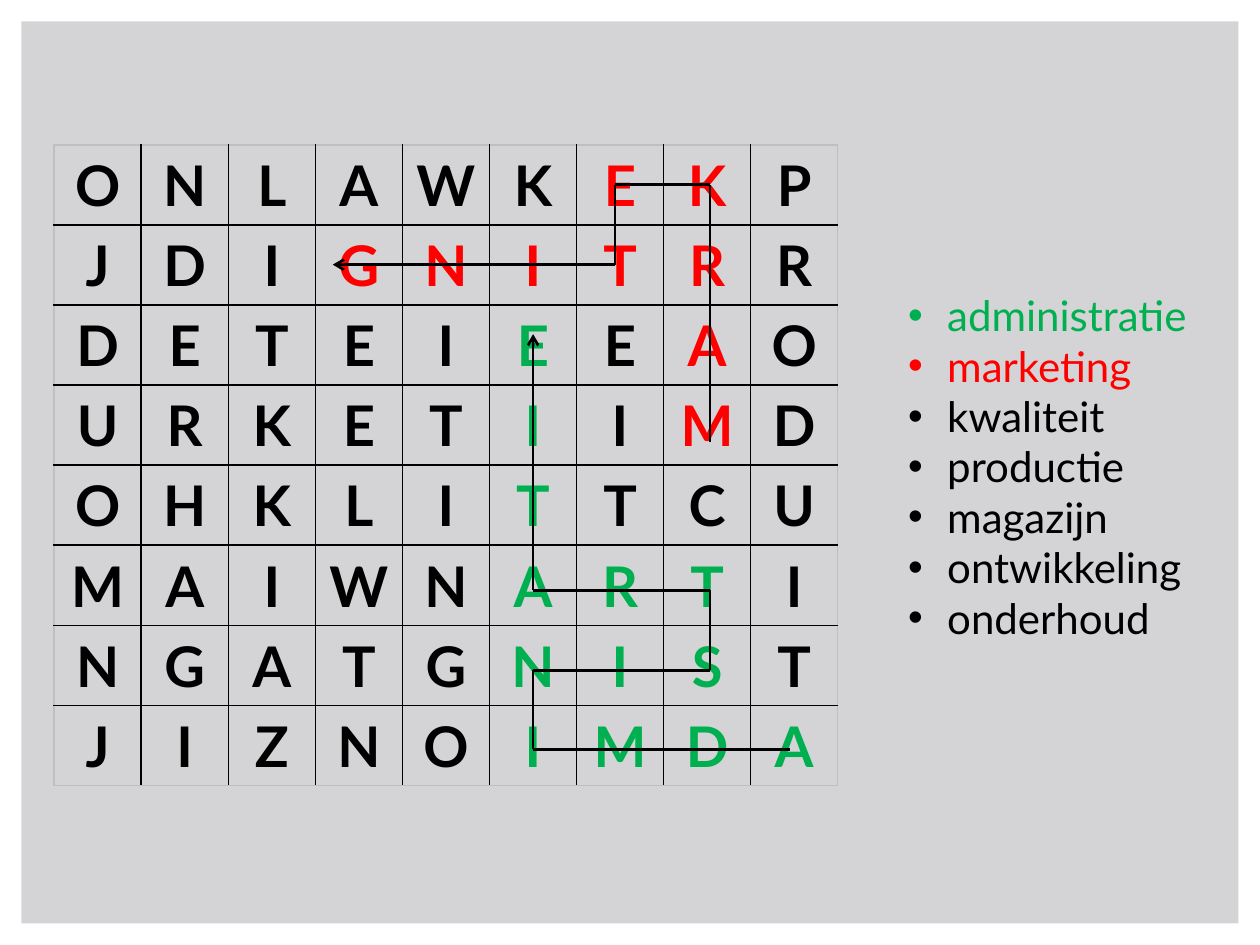
from dataclasses import dataclass

import pptx
import pptx.dml.color
import pptx.enum.shapes
import pptx.enum.text
import pptx.oxml.ns
import pptx.util
from lxml import etree

COLOURS = {"panel": "D4D4D6", "ink": "000000", "edge": "BFBFBF",
           "green": "00B050", "red": "FF0000"}
FONT = "Lato"
SLIDE_W, SLIDE_H = 10, 7.5
MARGIN = 0.17

LETTERS = ["ONLAWKEKP", "JDIGNITRR", "DETEIEEAO", "URKETIIMD",
           "OHKLITTCU", "MAIWNARTI", "NGATGNIST", "JIZNOIMDA"]
ROWS, COLS = len(LETTERS), len(LETTERS[0])
GRID_LEFT, GRID_TOP, GRID_W, GRID_H = 0.43, 1.15, 6.22, 5.07
CELL_W, CELL_H = GRID_W / COLS, GRID_H / ROWS


@dataclass
class Word:
    text: str
    colour: str = "ink"
    # Turning points of the trail, as (column, row) in grid units
    trail: tuple[tuple[float, float], ...] = ()

    def legs(self) -> list[tuple]:
        return list(zip(self.trail, self.trail[1:]))

    def cells(self) -> set[tuple[int, int]]:
        found = set()
        for (x1, y1), (x2, y2) in self.legs():
            cols = sorted((int(x1), int(x2)))
            rows = sorted((int(y1), int(y2)))
            found |= {(c, r) for c in range(cols[0], cols[1] + 1)
                      for r in range(rows[0], rows[1] + 1)}
        return found


WORDS = [
    Word("administratie", "green",
         ((8.45, 7.57), (5.5, 7.57), (5.5, 6.58), (7.53, 6.58),
          (7.53, 5.58), (5.5, 5.58), (5.5, 2.37))),
    Word("marketing", "red",
         ((7.53, 3.72), (7.53, 0.5), (6.44, 0.5), (6.44, 1.5), (3.2, 1.5))),
    Word("kwaliteit"), Word("productie"), Word("magazijn"),
    Word("ontwikkeling"), Word("onderhoud"),
]


def inches(value: float) -> int:
    return pptx.util.Inches(value)


def rgb(name: str) -> pptx.dml.color.RGBColor:
    return pptx.dml.color.RGBColor.from_string(COLOURS[name])


def add_child(parent, tag: str, **attributes: str):
    child = etree.SubElement(parent, pptx.oxml.ns.qn(tag))
    for key, value in attributes.items():
        child.set(key, value)
    return child


def add_run(paragraph, text: str, size: int, colour: str, bold: bool) -> None:
    run = paragraph.add_run()
    run.text = text
    run.font.name = FONT
    run.font.size = pptx.util.Pt(size)
    run.font.bold = bold
    run.font.color.rgb = rgb(colour)


def set_borders(cell, col: int, row: int) -> None:
    outer_sides = {"L": col == 0, "R": col == COLS - 1,
                   "T": row == 0, "B": row == ROWS - 1}
    properties = cell._tc.get_or_add_tcPr()
    for side, outer in outer_sides.items():
        border = add_child(properties, f"a:ln{side}", w=str(pptx.util.Pt(1)))
        fill = add_child(border, "a:solidFill")
        add_child(fill, "a:srgbClr", val=COLOURS["edge" if outer else "ink"])


def add_panel(slide) -> None:
    panel = slide.shapes.add_shape(
        pptx.enum.shapes.MSO_SHAPE.RECTANGLE, inches(MARGIN), inches(MARGIN),
        inches(SLIDE_W - 2 * MARGIN), inches(SLIDE_H - 2 * MARGIN))
    panel.shadow.inherit = False
    panel.fill.solid()
    panel.fill.fore_color.rgb = rgb("panel")
    panel.line.fill.background()


def add_puzzle(slide) -> None:
    puzzle = slide.shapes.add_table(
        ROWS, COLS, inches(GRID_LEFT), inches(GRID_TOP),
        inches(GRID_W), inches(GRID_H)).table
    puzzle.first_row = puzzle.horz_banding = False
    found = {place: word.colour for word in WORDS for place in word.cells()}
    for row, line in enumerate(LETTERS):
        puzzle.rows[row].height = inches(CELL_H)
        for col, letter in enumerate(line):
            cell = puzzle.cell(row, col)
            set_borders(cell, col, row)
            cell.fill.background()
            cell.vertical_anchor = pptx.enum.text.MSO_ANCHOR.MIDDLE
            paragraph = cell.text_frame.paragraphs[0]
            paragraph.alignment = pptx.enum.text.PP_ALIGN.CENTER
            add_run(paragraph, letter, 32, found.get((col, row), "ink"), True)


def add_word_list(slide) -> None:
    frame = slide.shapes.add_textbox(
        inches(7.11), inches(2.25), inches(2.44), inches(3.23)).text_frame
    frame.word_wrap = True
    frame.auto_size = pptx.enum.text.MSO_AUTO_SIZE.SHAPE_TO_FIT_TEXT
    indent = inches(0.31)
    for index, word in enumerate(WORDS):
        paragraph = frame.add_paragraph() if index else frame.paragraphs[0]
        properties = paragraph._p.get_or_add_pPr()
        properties.set("marL", str(indent))
        properties.set("indent", str(-indent))
        add_child(properties, "a:buFont", typeface="Arial")
        add_child(properties, "a:buChar", char="•")
        add_run(paragraph, word.text, 24, word.colour, False)


def add_trail(slide, word: Word) -> None:
    legs = word.legs()
    for index, leg in enumerate(legs):
        (x1, y1), (x2, y2) = [
            (inches(GRID_LEFT + col * CELL_W), inches(GRID_TOP + row * CELL_H))
            for col, row in leg]
        stroke = slide.shapes.add_connector(
            pptx.enum.shapes.MSO_CONNECTOR.STRAIGHT, x1, y1, x2, y2)
        stroke.line.color.rgb = rgb("ink")
        stroke.line.width = pptx.util.Pt(1.5)
        if index == len(legs) - 1:
            add_child(stroke.line._get_or_add_ln(), "a:tailEnd", type="arrow")
        add_child(stroke._element.spPr, "a:effectLst")


def main() -> None:
    deck = pptx.Presentation()
    deck.slide_width, deck.slide_height = inches(SLIDE_W), inches(SLIDE_H)
    slide = deck.slides.add_slide(deck.slide_layouts[6])

    # Backdrop, letter grid and words to find
    add_panel(slide)
    add_puzzle(slide)
    add_word_list(slide)

    # Trails through the words already found
    for word in WORDS:
        add_trail(slide, word)

    deck.save("out.pptx")


if __name__ == "__main__":
    main()
